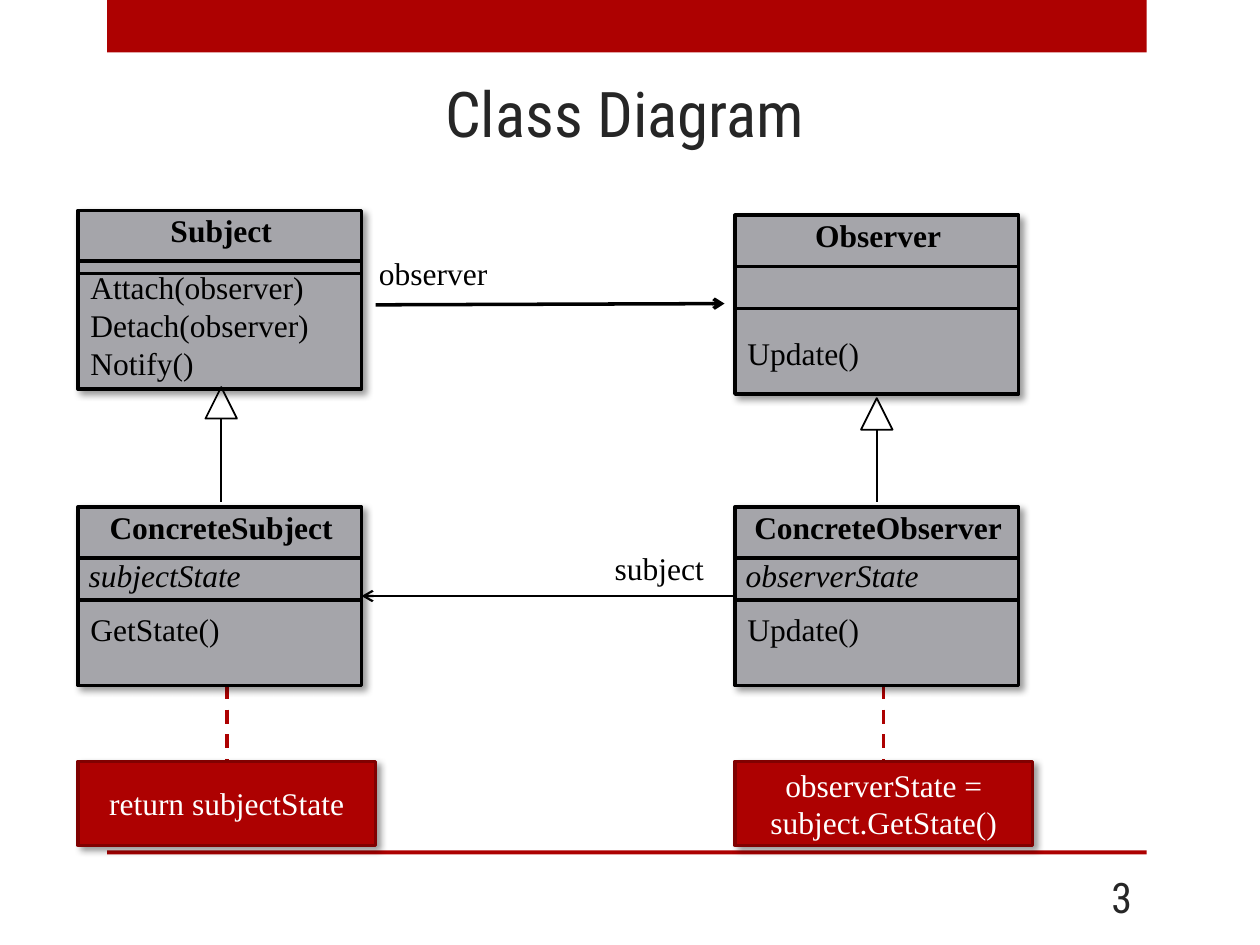
from lxml import etree
from pptx import Presentation
from pptx.dml.color import RGBColor
from pptx.enum import dml, shapes, text
from pptx.oxml.ns import qn
from pptx.util import Pt

RED = RGBColor(0xAD, 0x01, 0x01)
DARK_RED = RGBColor(0x80, 0x01, 0x01)
GREY = RGBColor(0xA5, 0xA5, 0xAA)
BLACK = RGBColor(0, 0, 0)
WHITE = RGBColor(0xFF, 0xFF, 0xFF)
CHARCOAL = RGBColor(0x26, 0x26, 0x26)

HEADING_FONT = "Roboto Condensed"
DIAGRAM_FONT = "Times New Roman"
LEFT, MIDDLE, RIGHT = text.PP_ALIGN.LEFT, text.PP_ALIGN.CENTER, text.PP_ALIGN.RIGHT

LEFT_COLUMN, RIGHT_COLUMN = 44.6, 420
CLASS_WIDTH, CLASS_HEIGHT = 162, 102.2
CONCRETE_TOP = 289.6
NOTE_TOP, NOTE_WIDTH, NOTE_HEIGHT = 435, 170, 48.2


def write(frame, lines, size=18, font=DIAGRAM_FONT, color=BLACK, bold=False,
          italic=False, align=LEFT, anchor=text.MSO_ANCHOR.TOP, wrap=True, pitch=21.6):
    frame.word_wrap = wrap
    frame.vertical_anchor = anchor
    for number, line in enumerate(lines):
        paragraph = frame.add_paragraph() if number else frame.paragraphs[0]
        paragraph.alignment = align
        if pitch:
            paragraph.line_spacing = Pt(pitch)
        run = paragraph.add_run()
        run.text = line
        run.font.size, run.font.name = Pt(size), font
        run.font.bold, run.font.italic = bold, italic
        run.font.color.rgb = color


def add_text(slide, x, y, width, height, lines, **style):
    box = slide.shapes.add_textbox(Pt(x), Pt(y), Pt(width), Pt(height))
    write(box.text_frame, lines, **style)


def add_block(slide, x, y, width, height, fill=None, line=None, weight=2,
              preset=shapes.MSO_SHAPE.RECTANGLE, shadow=False):
    block = slide.shapes.add_shape(preset, Pt(x), Pt(y), Pt(width), Pt(height))
    block.shadow.inherit = False
    if fill is None:
        block.fill.background()
    else:
        block.fill.solid()
        block.fill.fore_color.rgb = fill
    if line is None:
        block.line.fill.background()
    else:
        block.line.color.rgb = line
        block.line.width = Pt(weight)
    if shadow:
        cast_shadow(block)
    return block


def cast_shadow(block):
    effects = block._element.spPr.find(qn("a:effectLst"))
    outer = etree.SubElement(effects, qn("a:outerShdw"), blurRad=str(Pt(4)),
                             dist=str(Pt(3)), dir="2700000", rotWithShape="0")
    color = etree.SubElement(outer, qn("a:srgbClr"), val=str(BLACK))
    etree.SubElement(color, qn("a:alpha"), val="40000")


def add_line(slide, x1, y1, x2, y2, color=BLACK, weight=2, dashed=False, arrow=False):
    line = slide.shapes.add_connector(shapes.MSO_CONNECTOR.STRAIGHT,
                                      Pt(x1), Pt(y1), Pt(x2), Pt(y2))
    line.line.color.rgb = color
    line.line.width = Pt(weight)
    if dashed:
        line.line.dash_style = dml.MSO_LINE.DASH
    if arrow:
        etree.SubElement(line.line._get_or_add_ln(), qn("a:tailEnd"), type="arrow")
    etree.SubElement(line._element.spPr, qn("a:effectLst"))


def add_frame(slide):
    """Top band, bottom rule, title and page number."""
    add_block(slide, 61.2, 0, 594, 30, fill=RED)
    add_block(slide, 61.2, 486, 594, 2.2, fill=RED)
    add_text(slide, 60, 38.2, 594, 51.8, ["Class Diagram"], size=36, font=HEADING_FONT,
             color=CHARCOAL, align=MIDDLE, anchor=text.MSO_ANCHOR.MIDDLE, pitch=None)
    add_text(slide, 594, 498.2, 60, 28.8, ["3"], size=24, font=HEADING_FONT,
             color=CHARCOAL, align=RIGHT, anchor=text.MSO_ANCHOR.MIDDLE, pitch=None)


def add_note(slide, x, y, words):
    """Note with its dashed tie, which runs up behind the class above."""
    tie = x + NOTE_WIDTH / 2
    add_line(slide, tie, y - 57.6, tie, y, color=RED, dashed=True)
    note = add_block(slide, x, y, NOTE_WIDTH, NOTE_HEIGHT, fill=RED, line=DARK_RED,
                     weight=1.75, shadow=True)
    write(note.text_frame, [words], color=WHITE, align=MIDDLE,
          anchor=text.MSO_ANCHOR.MIDDLE)


def add_class(slide, x, y, name, operations, attribute=None,
              dividers=(29.2, 53.3), operations_top=55.4):
    """Class box; dividers and operations_top are measured from its top."""
    add_block(slide, x, y, CLASS_WIDTH, CLASS_HEIGHT, fill=GREY, line=BLACK, shadow=True)
    for offset in dividers:
        add_line(slide, x, y + offset, x + CLASS_WIDTH, y + offset)
    add_text(slide, x + 0.8, y - 2.9, CLASS_WIDTH, 29, [name], bold=True,
             align=MIDDLE, wrap=False)
    if attribute:
        add_text(slide, x - 1, y + 24.4, CLASS_WIDTH, 29, [attribute],
                 italic=True, wrap=False)
    add_text(slide, x, y + operations_top, CLASS_WIDTH, 7.2 + 21.6 * len(operations),
             operations, wrap=False)


def add_inheritance(slide, center, top, bottom):
    side = 18
    add_block(slide, center - side / 2, top, side, side, line=BLACK, weight=1,
              preset=shapes.MSO_SHAPE.ISOSCELES_TRIANGLE)
    add_line(slide, center, top + side, center, bottom, weight=1.25)


def add_association(slide, start, end, label, label_x, label_y, weight):
    add_line(slide, *start, *end, weight=weight, arrow=True)
    add_text(slide, label_x, label_y, 77, 29, [label], wrap=False)


def main():
    deck = Presentation()
    deck.slide_width, deck.slide_height = Pt(720), Pt(540)
    slide = deck.slides.add_slide(deck.slide_layouts[6])

    add_frame(slide)
    add_note(slide, LEFT_COLUMN, NOTE_TOP, "return subjectState")
    add_note(slide, RIGHT_COLUMN, NOTE_TOP, "observerState = subject.GetState()")

    add_class(slide, LEFT_COLUMN, 120.2, "Subject",
              ["Attach(observer)", "Detach(observer)", "Notify()"],
              dividers=(29, 36), operations_top=29.6)
    add_class(slide, RIGHT_COLUMN, 123, "Observer", ["Update()"], operations_top=64.2)
    add_class(slide, LEFT_COLUMN, CONCRETE_TOP, "ConcreteSubject", ["GetState()"],
              attribute="subjectState")
    add_class(slide, RIGHT_COLUMN, CONCRETE_TOP, "ConcreteObserver", ["Update()"],
              attribute="observerState")

    add_inheritance(slide, 126.4, 221.2, 286.6)
    add_inheritance(slide, 501, 227.5, 286.6)
    add_association(slide, (214.6, 174.2), (414, 173.5), "observer", 209.5, 141.8, 2)
    add_association(slide, (RIGHT_COLUMN, 340.6), (LEFT_COLUMN + CLASS_WIDTH, 340.6),
                    "subject", 344.2, 310.3, 1.25)

    deck.save("out.pptx")


if __name__ == "__main__":
    main()
